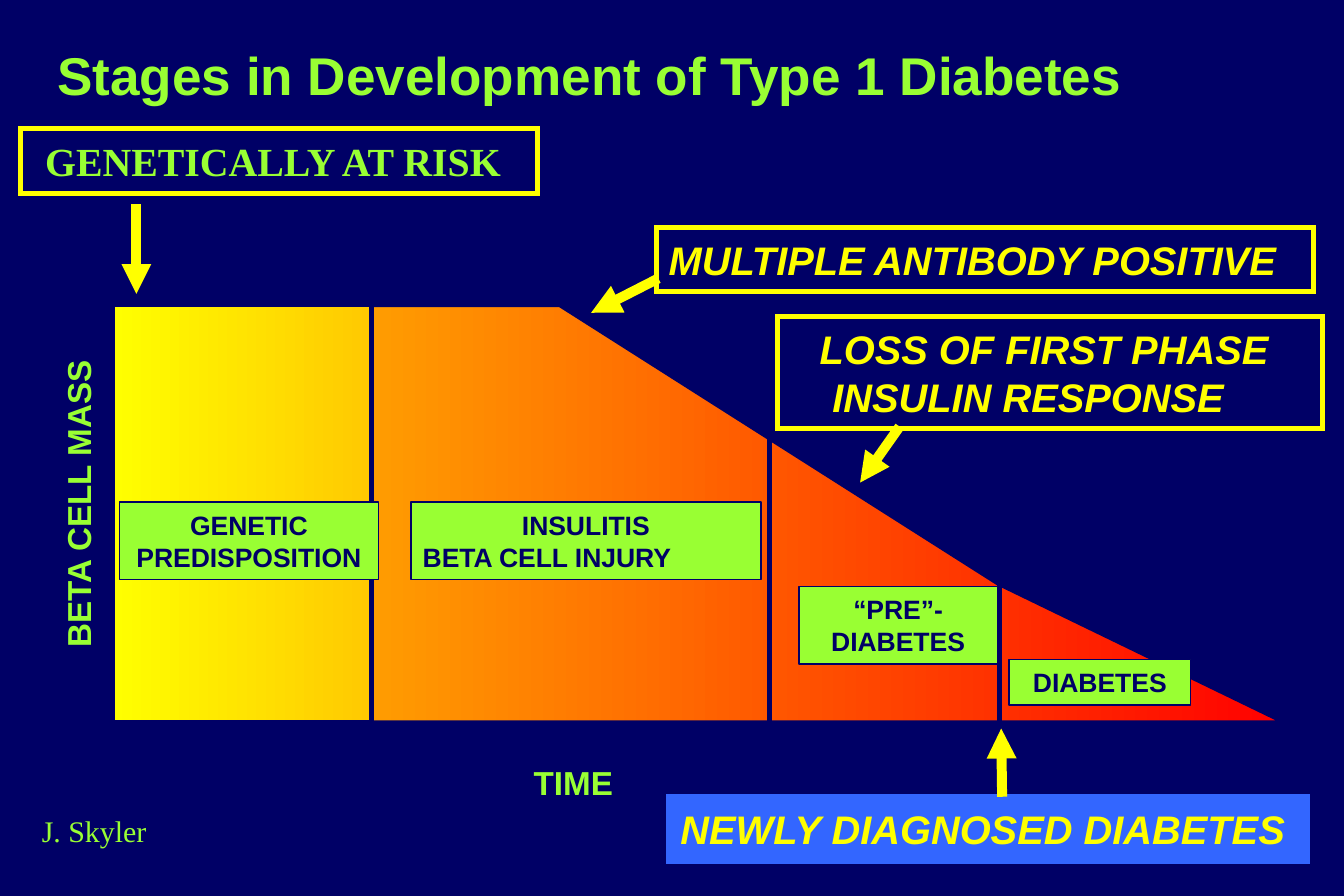
from lxml import etree
from pptx import Presentation
from pptx.dml.color import RGBColor
from pptx.enum.shapes import MSO_CONNECTOR, MSO_SHAPE
from pptx.enum.text import MSO_ANCHOR, PP_ALIGN
from pptx.oxml.ns import qn
from pptx.util import Cm, Pt

RECT = MSO_SHAPE.RECTANGLE
LINE = MSO_CONNECTOR.STRAIGHT
MID, LOW = MSO_ANCHOR.MIDDLE, MSO_ANCHOR.BOTTOM
LEFT, MIDST = PP_ALIGN.LEFT, PP_ALIGN.CENTER
SANS, SERIF = "Arial", "Times New Roman"
HUES = {"navy": "000066", "lime": "99FF33", "yellow": "FFFF00",
        "gold": "FFC901", "red": "FF0000", "blue": "3366FF"}
INK = {name: RGBColor.from_string(code) for name, code in HUES.items()}


def write(shape, lines, size, hue, font=SANS, bold=True, slant=False, wrap=True):
    frame = shape.text_frame
    frame.word_wrap = wrap
    frame.vertical_anchor = MID
    for i, (text, align) in enumerate(lines):
        para = frame.add_paragraph() if i else frame.paragraphs[0]
        para.alignment = align
        run = para.add_run()
        run.text = text
        run.font.name = font
        run.font.size = Pt(size)
        run.font.bold = bold
        run.font.italic = slant
        run.font.color.rgb = INK[hue]


def link(start, end, hue, width):
    line = deck.add_connector(LINE, *map(Cm, start + end))
    line.line.color.rgb = INK[hue]
    line.line.width = Pt(width)
    etree.SubElement(line._element.spPr, qn("a:effectLst"))
    return line


prs = Presentation()
prs.slide_width, prs.slide_height = Cm(28.58), Cm(19.05)
slide = prs.slides.add_slide(prs.slide_layouts[6])
slide.background.fill.solid()
slide.background.fill.fore_color.rgb = INK["navy"]
deck = slide.shapes

LABELS = [
    ("Stages in Development of Type 1 Diabetes", (0.97, 0.6, 23.52, 1.78), 32, SANS, True, 0),
    ("BETA CELL MASS", (-1.7, 10.11, 6.71, 1.12), 20, SANS, True, 270),
    ("TIME", (11.1, 16.08, 2.5, 1.09), 20, SANS, True, 0),
    ("J. Skyler", (0.64, 17.15, 9.32, 1.02), 18, SERIF, False, 0),
]
labels = []
for text, area, size, font, bold, turn in LABELS:
    label = deck.add_textbox(*map(Cm, area))
    label.rotation = turn
    write(label, [(text, LEFT)], size, "lime", font, bold, wrap=False)
    labels.append(label)
labels[0].text_frame.vertical_anchor = LOW
labels[-1].text_frame.word_wrap = True

left, top, base = 2.39, 6.48, 15.37
pen = deck.build_freeform(Cm(left), Cm(top))
slope = [(11.91, top), (21.23, 12.4), (27.36, base), (left, base)]
pen.add_line_segments([(Cm(x), Cm(y)) for x, y in slope], close=True)
mass = pen.convert_to_shape()
early = deck.add_shape(RECT, Cm(left), Cm(top), Cm(5.51), Cm(base - top))
for shape, pair in [(mass, ("gold", "red")), (early, ("yellow", "gold"))]:
    shape.shadow.inherit = False
    shape.fill.gradient()
    shape.fill.gradient_angle = 0
    for stop, hue in zip(shape.fill.gradient_stops, pair):
        stop.color.rgb = INK[hue]
    shape.line.color.rgb = INK["navy"]
    shape.line.width = Pt(3)

for x, y in [(16.36, 9.32), (21.26, 12.42)]:
    link((x, base), (x, y), "navy", 3)

STAGES = [
    ([("GENETIC PREDISPOSITION", MIDST)], (2.54, 10.67, 5.51, 1.65)),
    ([("INSULITIS", MIDST), ("BETA CELL INJURY", LEFT)], (8.74, 10.67, 7.44, 1.65)),
    ([("“PRE”-DIABETES", MIDST)], (16.99, 12.47, 4.22, 1.65)),
    ([("DIABETES", MIDST)], (21.46, 14.02, 3.86, 0.97)),
]
for lines, area in STAGES:
    stage = deck.add_shape(RECT, *map(Cm, area))
    stage.shadow.inherit = False
    stage.fill.solid()
    stage.fill.fore_color.rgb = INK["lime"]
    stage.line.color.rgb = INK["navy"]
    stage.line.width = Pt(1)
    write(stage, lines, 16, "navy")

CALLS = [
    (["GENETICALLY AT RISK"], (0.43, 2.74, 11, 1.37), "lime", SERIF, None),
    (["MULTIPLE ANTIBODY POSITIVE"], (13.97, 4.83, 13.97, 1.37), "yellow", SANS, None),
    (["LOSS OF FIRST PHASE", "INSULIN RESPONSE"], (16.54, 6.73, 11.58, 2.39), "yellow", SANS, None),
    (["NEWLY DIAGNOSED DIABETES"], (14.22, 16.94, 13.59, 1.37), "yellow", SANS, "blue"),
]
calls = []
for lines, area, hue, font, back in CALLS:
    call = deck.add_shape(RECT, *map(Cm, area))
    call.shadow.inherit = False
    if back:
        call.fill.solid()
        call.fill.fore_color.rgb = INK[back]
    else:
        call.fill.background()
    call.line.color.rgb = INK[back or "yellow"]
    call.line.width = Pt(3)
    etree.SubElement(call.line._get_or_add_ln(), qn("a:miter"), lim="800000")
    write(call, [(text, LEFT) for text in lines], 24, hue, font, slant=font == SANS)
    calls.append(call)
calls[0].text_frame.margin_left = Cm(0.53)
for para, gap in zip(calls[2].text_frame.paragraphs, (0.64, 0.91)):
    props = para._p.get_or_add_pPr()
    props.set("marL", str(Cm(gap)))
    props.set("indent", "0")

ARROWS = [
    ((2.9, 4.34), (2.9, 6.25)),
    ((14, 5.92), (12.57, 6.65)),
    ((19.13, 9.07), (18.29, 10.26)),
    ((21.31, 16.94), (21.29, 15.49)),
]
for start, end in ARROWS:
    arrow = link(start, end, "yellow", 6)
    etree.SubElement(arrow.line._get_or_add_ln(), qn("a:tailEnd"), type="triangle")

prs.save("out.pptx")
